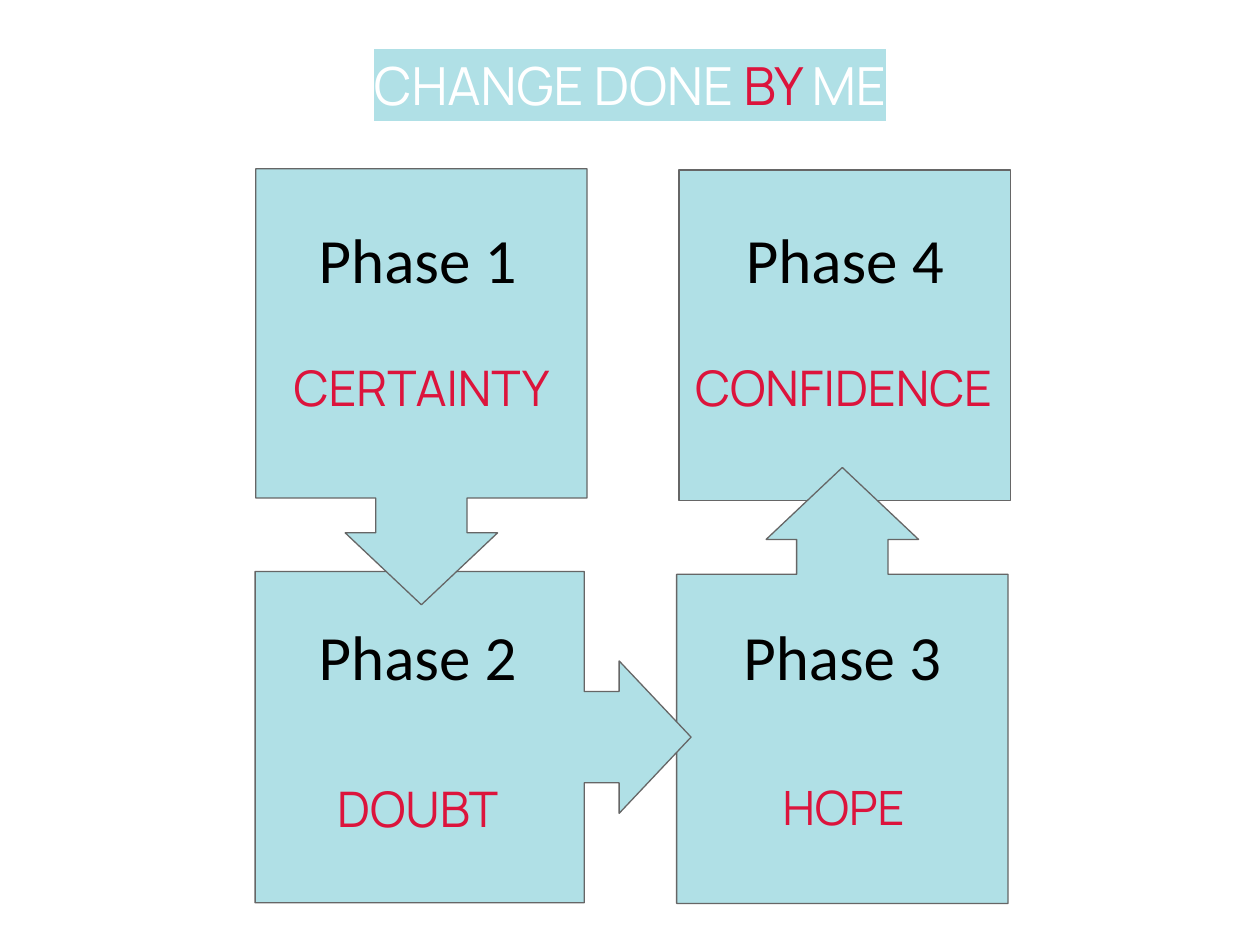
from pptx import Presentation
from pptx.dml.color import RGBColor
from pptx.enum.shapes import MSO_SHAPE as Shape
from pptx.enum.text import MSO_ANCHOR as Anchor, MSO_AUTO_SIZE as AutoSize, PP_ALIGN as Align
from pptx.oxml.ns import qn
from pptx.util import Inches, Pt
from lxml.etree import SubElement

PALE, RED, WHITE, BLACK, GREY = "B0E0E6", "DC143C", "FFFFFF", "000000", "666666"
COLS, ROWS = 100, 75  # grid over the 10 x 7.5 inch slide


def rgb(value):
    return RGBColor.from_string(value)


class Deck:
    heading_font, label_font = "Manrope", "Calibri"

    def __init__(self, prs):
        self.prs = prs
        self.slide = prs.slides.add_slide(prs.slide_layouts[5])

    def place(self, col, row, cols, rows):
        cell_w, cell_h = self.prs.slide_width / COLS, self.prs.slide_height / ROWS
        return [round(v) for v in (col * cell_w, row * cell_h, cols * cell_w, rows * cell_h)]

    def frame(self, sp, anchor):
        tf = sp.text_frame
        tf.word_wrap = True
        tf.auto_size = AutoSize.NONE
        tf.vertical_anchor = anchor
        tf.margin_left = tf.margin_right = tf.margin_top = tf.margin_bottom = Inches(0.1)
        return tf.paragraphs[0]

    def style(self, p, font, size, color=None):
        p.alignment = Align.CENTER
        p.font.name, p.font.size = font, Pt(size)
        if color:
            p.font.color.rgb = rgb(color)

    def title(self, at, runs, size):
        sp = self.slide.shapes.title
        sp.left, sp.top, sp.width, sp.height = self.place(*at)
        p = self.frame(sp, Anchor.MIDDLE)
        self.style(p, self.heading_font, size)
        for text, color in runs:
            r = p.add_run()
            r.text = text
            r.font.color.rgb = rgb(color)
            highlight = SubElement(r.font._element, qn("a:highlight"))
            SubElement(highlight, qn("a:srgbClr")).set("val", PALE)

    def block(self, kind, at, rotation=0, adjustments=()):
        sp = self.slide.shapes.add_shape(kind, *self.place(*at))
        sp.shadow.inherit = False
        sp.rotation = rotation
        for i, value in enumerate(adjustments):
            sp.adjustments[i] = value
        sp.fill.solid()
        sp.fill.fore_color.rgb = rgb(PALE)
        sp.line.color.rgb = rgb(GREY)
        sp.line.width = Pt(0.75)

    def callout(self, col, row, rotation):
        self.block(Shape.DOWN_ARROW_CALLOUT, (col, row, 26.3, 34.6), rotation,
                   (0.276, 0.23, 0.217, 0.755))

    def label(self, text, at, font, size, color):
        sp = self.slide.shapes.add_textbox(*self.place(*at))
        p = self.frame(sp, Anchor.TOP)
        p.text = text
        self.style(p, font, size, color)


def main():
    prs = Presentation()
    prs.slide_width, prs.slide_height = Inches(10), Inches(7.5)
    deck = Deck(prs)

    # Title
    deck.title((5, 3.3, 90, 6.8),
               [("CHANGE DONE", WHITE), (" BY ", RED), ("ME", WHITE)], 30)

    # Cycle: last box, then the arrow boxes leading to it, back to front
    deck.block(Shape.RECTANGLE, (53.9, 13.5, 26.3, 26.2))
    for col, row, rotation in [(53.7, 37.1, 180), (24.4, 41.2, 270), (20.3, 13.4, 0)]:
        deck.callout(col, row, rotation)

    # Phase names: column and row, then word column, width and size
    upper, lower = (16.5, 27.4), (48, 60.8)
    phases = [
        ("Phase 1", 22.3, upper, "CERTAINTY", 20.3, 26.3, 28),
        ("Phase 2", 22.3, lower, "DOUBT", 20, 26.3, 28),
        ("Phase 3", 56, lower, "HOPE", 52.5, 28.9, 27),
        ("Phase 4", 56.2, upper, "CONFIDENCE", 52.5, 28.9, 28),
    ]
    for name, col, (name_row, word_row), word, word_col, word_cols, size in phases:
        deck.label(name, (col, name_row, 21.7, 8.3), deck.label_font, 36, BLACK)
        deck.label(word, (word_col, word_row, word_cols, 8.3), deck.heading_font, size, RED)

    prs.save("out.pptx")


if __name__ == "__main__":
    main()
